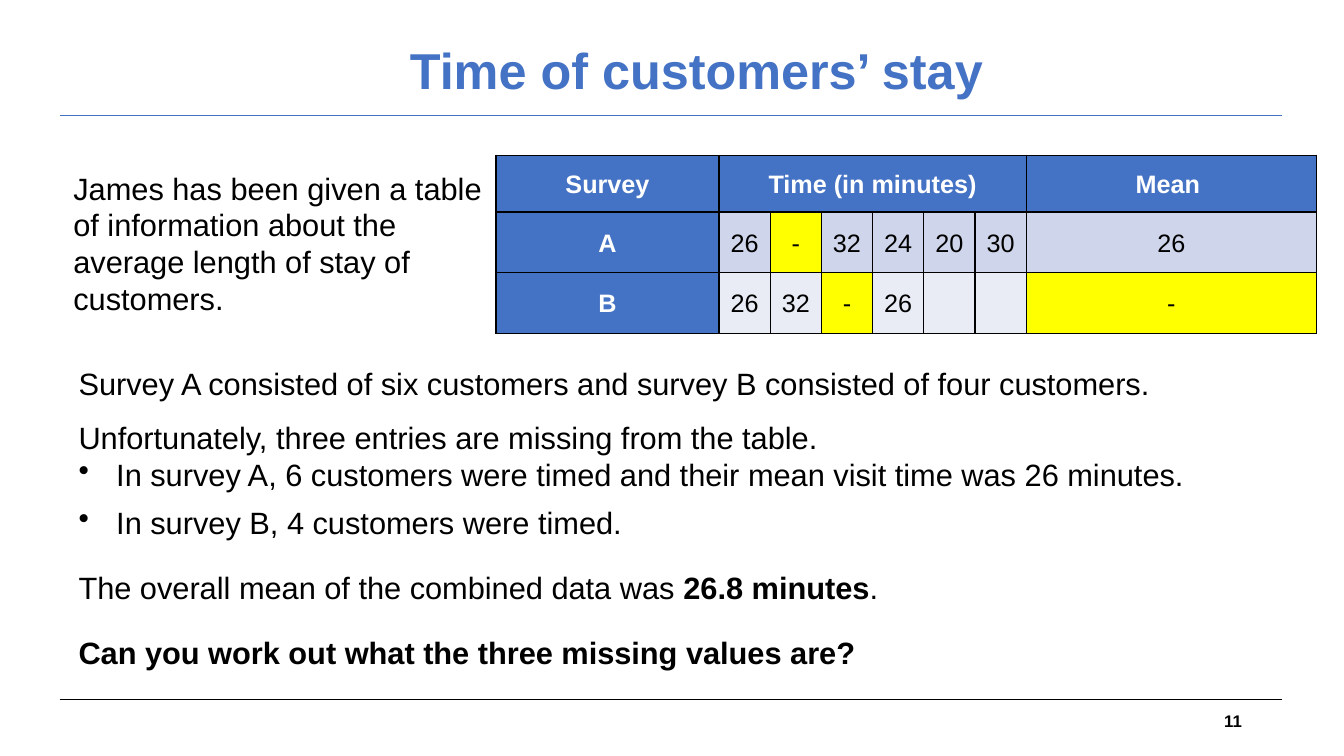
"""Builds the slide about the time of customers' stay."""
from lxml import etree
from pptx import Presentation
from pptx.dml.color import RGBColor
from pptx.enum.shapes import MSO_CONNECTOR
from pptx.enum.text import MSO_ANCHOR, PP_ALIGN
from pptx.oxml.ns import qn
from pptx.util import Cm, Pt

STRAIGHT = MSO_CONNECTOR.STRAIGHT
MIDDLE, TOP = MSO_ANCHOR.MIDDLE, MSO_ANCHOR.TOP
LEFT, CENTER, RIGHT = PP_ALIGN.LEFT, PP_ALIGN.CENTER, PP_ALIGN.RIGHT
BLACK = RGBColor(0x00, 0x00, 0x00)
WHITE = RGBColor(0xFF, 0xFF, 0xFF)
BLUE = RGBColor(0x44, 0x72, 0xC4)
YELLOW = RGBColor(0xFF, 0xFF, 0x00)
BAND_A = RGBColor(0xCF, 0xD5, 0xEA)
BAND_B = RGBColor(0xE9, 0xEB, 0xF5)


def style(paragraph, size, color=BLACK, bold=False, align=LEFT):
    paragraph.font.name = "Arial"
    paragraph.font.size = Pt(size)
    paragraph.font.color.rgb = color
    paragraph.font.bold = bold
    paragraph.alignment = align


def add_text(left, top, width, height, anchor=TOP):
    box = slide.shapes.add_textbox(Cm(left), Cm(top), Cm(width), Cm(height))
    box.text_frame.word_wrap = True
    box.text_frame.vertical_anchor = anchor
    return box.text_frame


presentation = Presentation()
presentation.slide_width = Cm(33.87)
presentation.slide_height = Cm(19.05)
slide = presentation.slides.add_slide(presentation.slide_layouts[6])

for rule_top, color in ((17.63, BLACK), (2.9, BLUE)):
    rule = slide.shapes.add_connector(STRAIGHT, Cm(1.5), Cm(rule_top), Cm(32.3), Cm(rule_top))
    rule.line.color.rgb = color
    rule.line.width = Pt(0.75)
    etree.SubElement(rule._element.spPr, qn("a:effectLst"))

title = add_text(7.04, 0.43, 21.03, 2.82, MIDDLE).paragraphs[0]
title.text = "Time of customers’ stay"
title.line_spacing = 0.9
style(title, 36, BLUE, True, CENTER)

page_number = add_text(23.93, 17.65, 7.62, 1.02, MIDDLE).paragraphs[0]
page_number.text = "11"
style(page_number, 12, bold=True, align=RIGHT)

BODY = [
    (["Survey A consisted of six customers and survey B consisted of four customers."], 0, 0, False),
    (["Unfortunately, three entries are missing from the table."], 12, 0, False),
    (["In survey A, 6 customers were timed and their mean visit time was 26 minutes."], 0, 8, True),
    (["In survey B, 4 customers were timed."], 0, 8, True),
    (["The overall mean of the combined data was ", "26.8 minutes", "."], 12, 8, False),
    (["", "Can you work out what the three missing values are?"], 12, 8, False),
]
body = add_text(1.73, 9.07, 29.79, 8.03)
for index, (parts, before, after, bulleted) in enumerate(BODY):
    paragraph = body.add_paragraph() if index else body.paragraphs[0]
    style(paragraph, 22)
    paragraph.space_before, paragraph.space_after = Pt(before), Pt(after)
    for position, part in enumerate(parts):
        if part:
            run = paragraph.add_run()
            run.text = part
            run.font.bold = position == 1
    if bulleted:
        properties = paragraph._p.get_or_add_pPr()
        properties.set("marL", str(Cm(0.95)))
        properties.set("indent", str(-Cm(0.95)))
        bullet = etree.Element(qn("a:buChar"), char="•")
        properties.find(qn("a:defRPr")).addprevious(bullet)

ROWS = [
    ["Survey", "Time (in minutes)", "", "", "", "", "", "Mean "],
    ["A", "26", "-", "32", "24", "20", "30", "26"],
    ["B", "26", "32", "-", "26", "", "", "-"],
]
BANDS = [BLUE, BAND_A, BAND_B]
COLUMN_WIDTHS = [5.62] + [1.29] * 6 + [7.32]
ROW_HEIGHTS = [1.43, 1.53, 1.53]
table = slide.shapes.add_table(
    3, 8, Cm(12.5), Cm(3.91), Cm(sum(COLUMN_WIDTHS)), Cm(sum(ROW_HEIGHTS))).table
for column, width in zip(table.columns, COLUMN_WIDTHS):
    column.width = Cm(width)
for row, height in zip(table.rows, ROW_HEIGHTS):
    row.height = Cm(height)
table.cell(0, 1).merge(table.cell(0, 6))
for row_index, texts in enumerate(ROWS):
    for column_index, text in enumerate(texts):
        cell = table.cell(row_index, column_index)
        heading = row_index == 0 or column_index == 0
        margin = Cm(0.03 if row_index else 0)
        cell.margin_left = cell.margin_right = margin
        cell.margin_top = cell.margin_bottom = margin
        cell.vertical_anchor = MIDDLE
        paragraph = cell.text_frame.paragraphs[0]
        paragraph.text = text
        paragraph.line_spacing = 1.07
        style(paragraph, 18, WHITE if heading else BLACK, heading, CENTER)
        properties = cell._tc.get_or_add_tcPr()
        for side in ("a:lnL", "a:lnR", "a:lnT", "a:lnB"):
            border = etree.SubElement(properties, qn(side), w=str(Pt(1)))
            fill = etree.SubElement(border, qn("a:solidFill"))
            etree.SubElement(fill, qn("a:srgbClr"), val=str(BLACK))
        cell.fill.solid()
        cell.fill.fore_color.rgb = (
            BLUE if heading else YELLOW if text == "-" else BANDS[row_index])

introduction = add_text(1.6, 4.14, 10.92, 4.01).paragraphs[0]
introduction.text = ("James has been given a table of information about "
                     "the average length of stay of customers.")
style(introduction, 22)

presentation.save("out.pptx")
